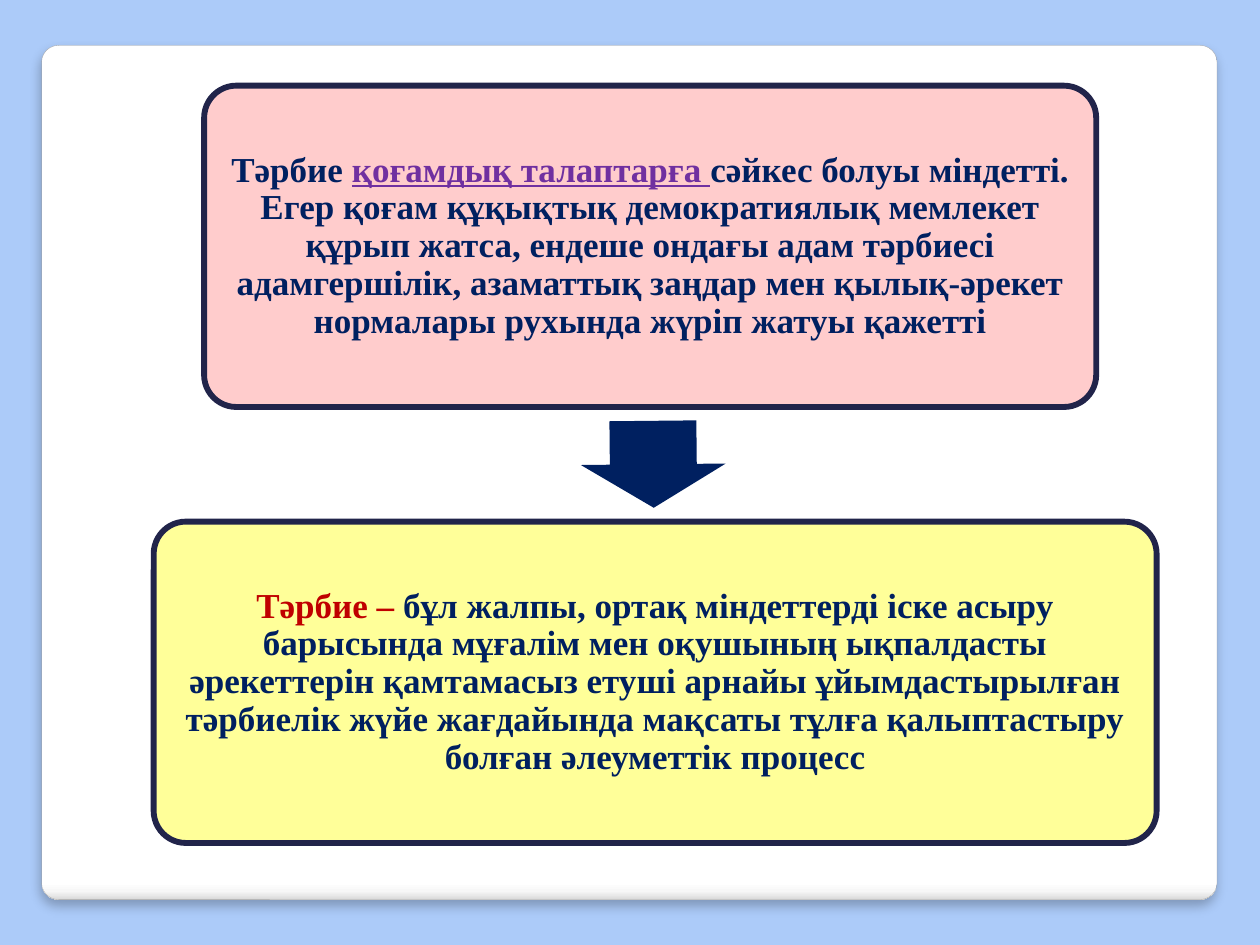
from dataclasses import dataclass

from lxml.etree import SubElement
from pptx import Presentation
from pptx.dml.color import RGBColor
from pptx.enum.shapes import MSO_SHAPE
from pptx.enum.text import MSO_ANCHOR, PP_ALIGN
from pptx.oxml.ns import qn
from pptx.shapes.autoshape import Shape
from pptx.slide import Slide
from pptx.util import Pt

PX = 9144  # EMU per px, 100 px to the inch


@dataclass(frozen=True)
class Theme:
    back: str = "ACCBF9"
    edge: str = "A4A4A4"
    line: str = "21244A"
    navy: str = "002060"
    plum: str = "7030A0"
    red: str = "C00000"
    pink: str = "FFCCCC"
    lemon: str = "FFFF99"
    shade: str = "000000"
    font: str = "Times New Roman"
    size: int = 20


@dataclass(frozen=True)
class Phrase:
    text: str
    color: str
    under: bool = False


@dataclass(frozen=True)
class Box:
    left: int
    top: int
    width: int
    height: int
    fill: str
    words: tuple[Phrase, ...]


THEME = Theme()
STOPS = ((0, "FFFFFF"), (98, "FFFFFF"), (99, "F7F7F7"), (100, "DADADA"))
BOXES = (
    Box(162, 68, 708, 255, THEME.pink, (
        Phrase("Тəрбие ", THEME.navy),
        Phrase("қоғамдық талаптарға ", THEME.plum, True),
        Phrase("сəйкес болуы міндетті. Егер қоғам құқықтық демократиялық "
               "мемлекет құрып жатса, ендеше ондағы адам тəрбиесі "
               "адамгершілік, азаматтық заңдар мен қылық-əрекет нормалары "
               "рухында жүріп жатуы қажетті", THEME.navy),
    )),
    Box(122, 414, 796, 255, THEME.lemon, (
        Phrase("Тəрбие – ", THEME.red),
        Phrase("бұл жалпы, ортақ міндеттерді іске асыру барысында мұғалім "
               "мен оқушының ықпалдасты əрекеттерін қамтамасыз етуші арнайы "
               "ұйымдастырылған тəрбиелік жүйе жағдайында мақсаты тұлға "
               "қалыптастыру болған əлеуметтік процесс", THEME.navy),
    )),
)


def rgb(color: str) -> RGBColor:
    return RGBColor.from_string(color)


def add_form(slide: Slide, kind: MSO_SHAPE, left: int, top: int,
             width: int, height: int) -> Shape:
    form = slide.shapes.add_shape(
        kind, left * PX, top * PX, width * PX, height * PX)
    form.shadow.inherit = False
    return form


def set_line(form: Shape, color: str, width: float) -> None:
    form.line.color.rgb = rgb(color)
    form.line.width = Pt(width)


def add_panel(slide: Slide) -> None:
    panel = add_form(slide, MSO_SHAPE.ROUNDED_RECTANGLE, 33, 36, 933, 678)
    panel.adjustments[0] = 0.02
    set_line(panel, THEME.edge, 0.16)

    # Gradient with four stops, running downward
    panel.fill.gradient()
    panel.fill.gradient_angle = 270
    stops = panel.element.spPr.find(".//" + qn("a:gsLst"))
    for old in list(stops):
        stops.remove(old)
    for place, color in STOPS:
        stop = SubElement(stops, qn("a:gs"), pos=str(place * 1000))
        SubElement(stop, qn("a:srgbClr"), val=color)

    # Soft shadow below
    effects = panel.element.spPr.find(qn("a:effectLst"))
    shadow = SubElement(
        effects, qn("a:outerShdw"), blurRad=str(Pt(6)), dist=str(Pt(4)),
        dir="5400000", algn="t", rotWithShape="0")
    tint = SubElement(shadow, qn("a:srgbClr"), val=THEME.shade)
    SubElement(tint, qn("a:alpha"), val="25000")


def add_box(slide: Slide, box: Box) -> None:
    form = add_form(slide, MSO_SHAPE.ROUNDED_RECTANGLE,
                    box.left, box.top, box.width, box.height)
    form.adjustments[0] = 0.1
    form.fill.solid()
    form.fill.fore_color.rgb = rgb(box.fill)
    set_line(form, THEME.line, 3.35)

    frame = form.text_frame
    frame.word_wrap = True
    frame.vertical_anchor = MSO_ANCHOR.MIDDLE
    frame.margin_left = frame.margin_right = 8 * PX
    frame.margin_top = frame.margin_bottom = 8 * PX

    para = frame.paragraphs[0]
    para.alignment = PP_ALIGN.CENTER
    para.line_spacing = 0.9
    para.font.name = THEME.font
    para.font.size = Pt(THEME.size)
    para.font.bold = True
    for phrase in box.words:
        run = para.add_run()
        run.text = phrase.text
        run.font.color.rgb = rgb(phrase.color)
        if phrase.under:
            run.font.underline = True


def add_arrow(slide: Slide) -> None:
    arrow = add_form(slide, MSO_SHAPE.RIGHT_ARROW, 484, 311, 69, 115)
    arrow.rotation = 89.4
    arrow.adjustments[0] = 0.6
    arrow.adjustments[1] = 0.5
    arrow.fill.solid()
    arrow.fill.fore_color.rgb = rgb(THEME.navy)
    arrow.line.fill.background()


def main() -> None:
    deck = Presentation()
    deck.slide_width, deck.slide_height = 1000 * PX, 750 * PX
    slide = deck.slides.add_slide(deck.slide_layouts[6])

    # Backdrop
    slide.background.fill.solid()
    slide.background.fill.fore_color.rgb = rgb(THEME.back)
    add_panel(slide)

    # Two statements joined by an arrow
    for box in BOXES:
        add_box(slide, box)
    add_arrow(slide)

    deck.save("out.pptx")


if __name__ == "__main__":
    main()
